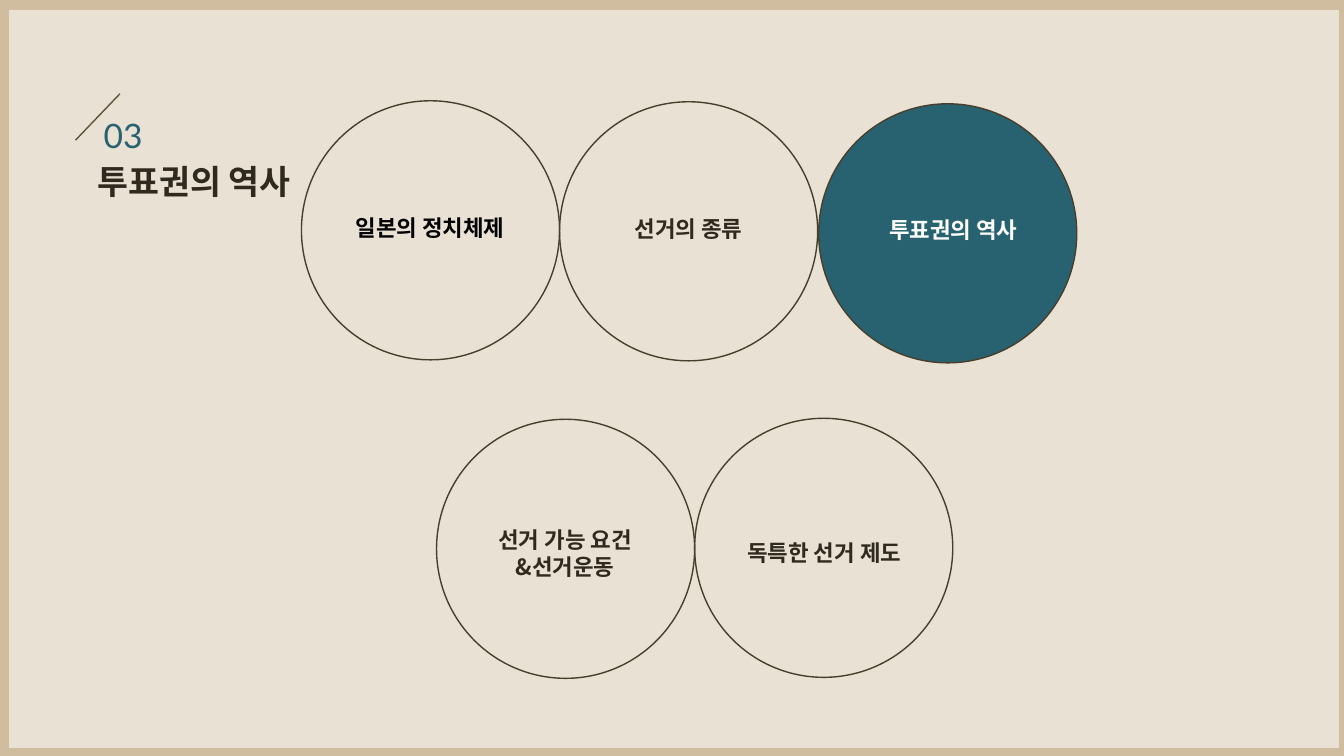
from lxml import etree
from pptx import Presentation
from pptx.dml.color import RGBColor
from pptx.enum.shapes import MSO_CONNECTOR, MSO_SHAPE
from pptx.enum.text import MSO_AUTO_SIZE, PP_ALIGN
from pptx.oxml.ns import qn
from pptx.util import Inches, Pt

RECTANGLE, OVAL = MSO_SHAPE.RECTANGLE, MSO_SHAPE.OVAL
STRAIGHT = MSO_CONNECTOR.STRAIGHT
LEFT, CENTER = PP_ALIGN.LEFT, PP_ALIGN.CENTER
FIT_SHAPE = MSO_AUTO_SIZE.SHAPE_TO_FIT_TEXT

KOREAN, LATIN = "Noto Sans CJK KR", "Lato"
SAND, TEAL, INK, OUTLINE = "D0BD9F", "286271", "30291E", "483E2C"
CIRCLE_W, CIRCLE_H = 2.56, 2.57

# circle left, circle top, label left, label top, label width, lines, text colour, fill
TOPICS = [
    (2.99, 1.00, 3.04, 2.08, 2.45, ["일본의 정치체제"], "000000", None),
    (5.55, 1.01, 5.84, 2.09, 1.98, ["선거의 종류"], INK, None),
    (8.12, 1.03, 8.23, 2.10, 2.45, ["투표권의 역사"], "FFFFFF", TEAL),
    (4.33, 4.16, 4.38, 5.17, 2.45, ["선거 가능 요건", "&선거운동"], INK, None),
    (6.89, 4.15, 6.95, 5.30, 2.45, ["독특한 선거 제도"], INK, None),
]


def rgb(value):
    return RGBColor.from_string(value)


def add_text(slide, box, lines, size, color, font=KOREAN, bold=True,
             align=LEFT, wrap=True):
    frame = slide.shapes.add_textbox(*map(Inches, box)).text_frame
    frame.word_wrap = wrap
    frame.auto_size = FIT_SHAPE
    frame.text = "\n".join(lines)
    for paragraph in frame.paragraphs:
        paragraph.alignment = align
        paragraph.font.size = Pt(size)
        paragraph.font.bold = bold
        paragraph.font.color.rgb = rgb(color)
        paragraph.font.name = font
        # Hangul takes the East Asian typeface
        defaults = paragraph._p.pPr.find(qn("a:defRPr"))
        etree.SubElement(defaults, qn("a:ea")).set("typeface", font)


def add_panel(slide, box):
    """Translucent white sheet that leaves a sand-coloured border."""
    slide.background.fill.solid()
    slide.background.fill.fore_color.rgb = rgb(SAND)
    panel = slide.shapes.add_shape(RECTANGLE, *map(Inches, box))
    panel.shadow.inherit = False
    panel.line.fill.background()
    panel.fill.solid()
    panel.fill.fore_color.rgb = rgb("FFFFFF")
    color = panel._element.spPr.find(qn("a:solidFill"))[0]
    etree.SubElement(color, qn("a:alpha")).set("val", "55000")


def add_heading(slide, left, top):
    """Slash, section number and section title."""
    slash = slide.shapes.add_connector(
        STRAIGHT, *map(Inches, (left + 0.44, top, left, top + 0.46)))
    slash.line.color.rgb = rgb("60523B")
    slash.line.width = Pt(1)
    etree.SubElement(slash._element.spPr, qn("a:effectLst"))
    add_text(slide, (left + 0.18, top + 0.16, 0.79, 0.49), ["03"], 24, TEAL,
             font=LATIN, bold=False)
    add_text(slide, (left + 0.12, top + 0.62, 2.31, 0.49), ["투표권의 역사"],
             24, INK, wrap=False)


def add_circle(slide, left, top, fill):
    circle = slide.shapes.add_shape(
        OVAL, *map(Inches, (left, top, CIRCLE_W, CIRCLE_H)))
    circle.shadow.inherit = False
    circle.line.color.rgb = rgb(OUTLINE)
    circle.line.width = Pt(1)
    if fill:
        circle.fill.solid()
        circle.fill.fore_color.rgb = rgb(fill)
    else:
        circle.fill.background()


def add_topics(slide):
    for left, top, label_left, label_top, width, lines, color, fill in TOPICS:
        add_circle(slide, left, top, fill)
        height = 0.37 if len(lines) == 1 else 0.63
        add_text(slide, (label_left, label_top, width, height), lines, 16,
                 color, align=CENTER)


def main():
    presentation = Presentation()
    presentation.slide_width = Inches(13.33)
    presentation.slide_height = Inches(7.5)
    slide = presentation.slides.add_slide(presentation.slide_layouts[6])
    add_panel(slide, (0.09, 0.1, 13.19, 7.32))
    add_heading(slide, 0.75, 0.93)
    add_topics(slide)
    presentation.save("out.pptx")


if __name__ == "__main__":
    main()
